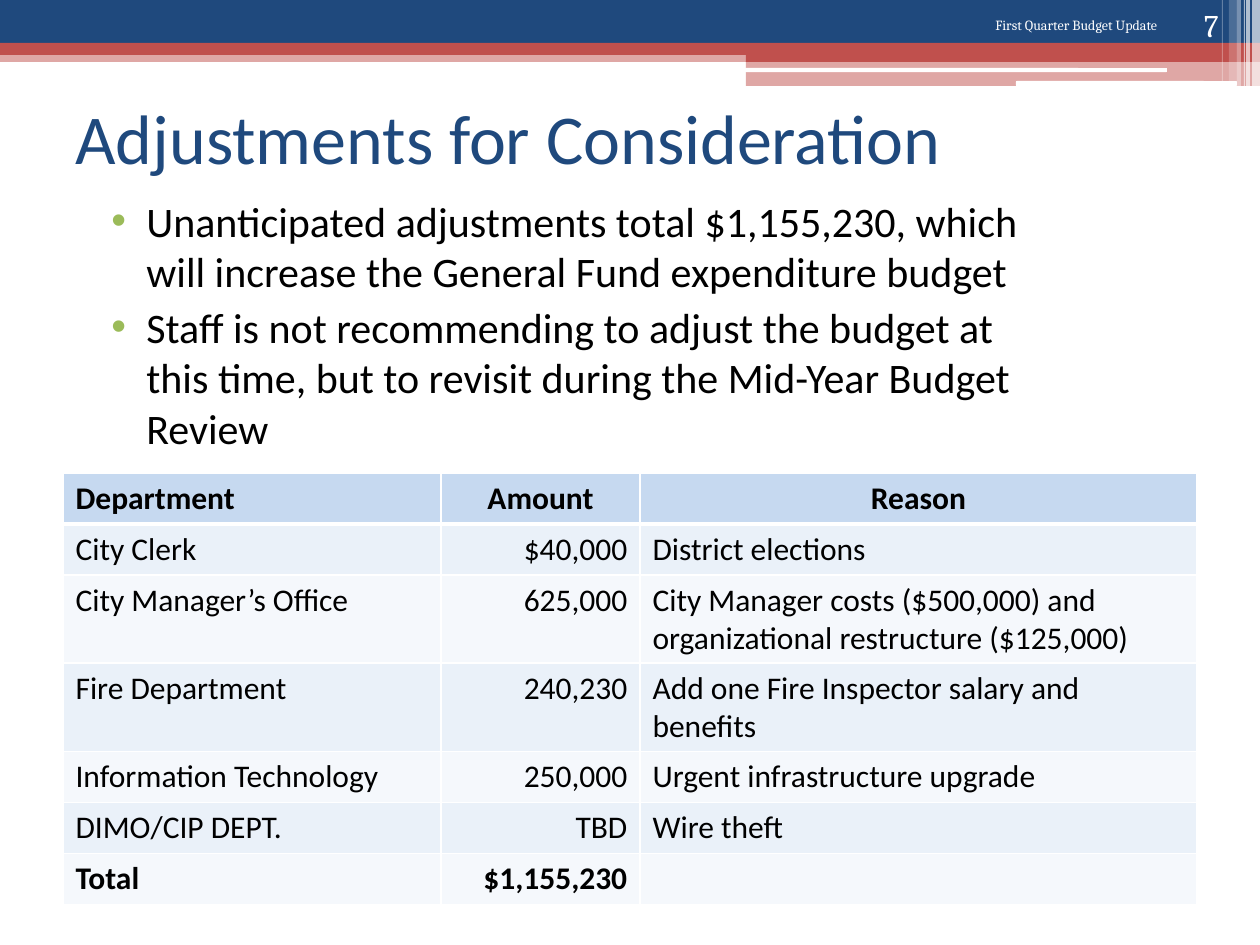
"""Builds the budget adjustments slide: banner, title, bullets and table."""
from typing import NamedTuple

from lxml import etree
from pptx import Presentation, util as u
from pptx.dml.color import RGBColor
from pptx.enum import shapes, text
from pptx.oxml.ns import qn

PX = 914400 / 126
NAVY, RED, WHITE, BLACK, GREEN = "1F497D", "C0504D", "FFFFFF", "000000", "9BBB59"
HEADER, BAND, PLAIN = "C6D9F0", "EAF1F9", "F5F8FC"
LEFT, CENTER, RIGHT = text.PP_ALIGN.LEFT, text.PP_ALIGN.CENTER, text.PP_ALIGN.RIGHT
TOP, MIDDLE, BOTTOM = text.MSO_ANCHOR.TOP, text.MSO_ANCHOR.MIDDLE, text.MSO_ANCHOR.BOTTOM


class Box(NamedTuple):
    x: int
    y: int
    w: int
    h: int


class Bar(NamedTuple):
    box: Box
    color: str
    alpha: int = 100
    rounded: bool = False


class Label(NamedTuple):
    box: Box
    lines: list[str]
    size: int
    font: str
    color: str
    align: text.PP_ALIGN = LEFT
    anchor: text.MSO_ANCHOR = TOP
    bullets: bool = False


BARS = [
    Bar(Box(0, 50, 1260, 12), RED, 50),
    Bar(Box(0, 0, 1260, 43), NAVY),
    Bar(Box(0, 43, 1260, 12), RED),
    Bar(Box(746, 49, 514, 13), RED),
    Bar(Box(746, 61, 514, 25), RED, 50),
    Bar(Box(745, 68, 422, 4), WHITE, rounded=True),
    Bar(Box(1016, 81, 221, 5), WHITE, rounded=True),
] + [
    Bar(Box(x, 0, w, h), WHITE, alpha)
    for x, w, h, alpha in [
        (1252, 8, 86, 65), (1246, 4, 86, 65), (1244, 1, 86, 60),
        (1237, 4, 86, 40), (1229, 8, 81, 20), (1222, 1, 81, 30),
    ]
]

LABELS = [
    Label(Box(63, 63, 1134, 147), ["Adjustments for Consideration"], 40, "Calibri", NAVY,
          anchor=MIDDLE),
    Label(Box(84, 189, 966, 231), [
        "Unanticipated adjustments total $1,155,230, which will increase the General Fund "
        "expenditure budget",
        "Staff is not recommending to adjust the budget at this time, but to revisit during "
        "the Mid-Year Budget Review",
    ], 24, "Calibri", BLACK, bullets=True),
    Label(Box(840, 10, 330, 63), ["First Quarter Budget Update"], 8, "Cambria", WHITE, RIGHT),
    Label(Box(1126, 0, 105, 50), ["7"], 18, "Cambria", WHITE, RIGHT, BOTTOM),
]

TABLE_BOX = Box(63, 473, 1134, 357)
COLUMNS = [378, 199, 557]
ROWS = [
    ("Department", "Amount", "Reason"),
    ("City Clerk", "$40,000", "District elections"),
    ("City Manager’s Office", "625,000",
     "City Manager costs ($500,000) and organizational restructure ($125,000)"),
    ("Fire Department", "240,230", "Add one Fire Inspector salary and benefits"),
    ("Information Technology", "250,000", "Urgent infrastructure upgrade"),
    ("DIMO/CIP DEPT.", "TBD", "Wire theft"),
    ("Total", "$1,155,230", ""),
]


def px(n: int) -> u.Emu:
    return u.Emu(round(n * PX))


def place(box: Box) -> list[u.Emu]:
    return [px(n) for n in box]


def paint(color_format, color: str) -> None:
    color_format.rgb = RGBColor.from_string(color)


def style(p, size: int, font: str, color: str, align: text.PP_ALIGN, bold: bool = False) -> None:
    p.alignment = align
    p.font.size, p.font.name, p.font.bold = u.Pt(size), font, bold
    paint(p.font.color, color)


def add_bar(s, bar: Bar) -> None:
    kind = shapes.MSO_SHAPE.ROUNDED_RECTANGLE if bar.rounded else shapes.MSO_SHAPE.RECTANGLE
    sp = s.shapes.add_shape(kind, *place(bar.box))
    sp.shadow.inherit = False
    sp.line.fill.background()
    sp.fill.solid()
    paint(sp.fill.fore_color, bar.color)
    if bar.alpha < 100:
        clr = sp.fill._xPr.find(".//" + qn("a:srgbClr"))
        etree.SubElement(clr, qn("a:alpha"), val=str(bar.alpha * 1000))


def add_bullet(p) -> None:
    p.space_before = u.Pt(3)
    pPr = p._p.get_or_add_pPr()
    pPr.set("marL", str(px(50)))
    pPr.set("indent", str(px(-35)))
    bu_clr = etree.Element(qn("a:buClr"))
    etree.SubElement(bu_clr, qn("a:srgbClr"), val=GREEN)
    bu_font = etree.Element(qn("a:buFont"), typeface="Arial")
    bu_char = etree.Element(qn("a:buChar"), char="•")
    pPr.find(qn("a:spcBef")).addnext(bu_clr)
    bu_clr.addnext(bu_font)
    bu_font.addnext(bu_char)


def add_label(s, label: Label) -> None:
    tf = s.shapes.add_textbox(*place(label.box)).text_frame
    tf.word_wrap = True
    tf.vertical_anchor = label.anchor
    for i, line in enumerate(label.lines):
        p = tf.add_paragraph() if i else tf.paragraphs[0]
        p.text = line
        style(p, label.size, label.font, label.color, label.align)
        if label.bullets:
            add_bullet(p)


def add_borders(cell, top: int, bottom: int) -> None:
    tcPr = cell._tc.get_or_add_tcPr()
    for side, width in zip("LRTB", (1, 1, top, bottom)):
        ln = etree.SubElement(tcPr, qn(f"a:ln{side}"), w=str(u.Pt(width)))
        fill = etree.SubElement(ln, qn("a:solidFill"))
        etree.SubElement(fill, qn("a:srgbClr"), val=WHITE)


def add_budget_table(s) -> None:
    table = s.shapes.add_table(len(ROWS), len(COLUMNS), *place(TABLE_BOX)).table
    for column, width in zip(table.columns, COLUMNS):
        column.width = px(width)
    for r, values in enumerate(ROWS):
        table.rows[r].height = px(TABLE_BOX.h // len(ROWS))
        fill = HEADER if r == 0 else BAND if r % 2 else PLAIN
        aligns = (LEFT, CENTER, CENTER) if r == 0 else (LEFT, RIGHT, LEFT)
        for c, value in enumerate(values):
            cell = table.cell(r, c)
            add_borders(cell, 3 if r == 1 else 1, 3 if r == 0 else 1)
            cell.fill.solid()
            paint(cell.fill.fore_color, fill)
            p = cell.text_frame.paragraphs[0]
            p.text = value
            style(p, 18, "Calibri", BLACK, aligns[c], r in (0, len(ROWS) - 1))


def main() -> None:
    prs = Presentation()
    prs.slide_width, prs.slide_height = px(1260), px(945)
    s = prs.slides.add_slide(prs.slide_layouts[6])
    for bar in BARS:
        add_bar(s, bar)
    title, *others = LABELS
    add_label(s, title)
    add_budget_table(s)
    for label in others:
        add_label(s, label)
    prs.save("out.pptx")


if __name__ == "__main__":
    main()
